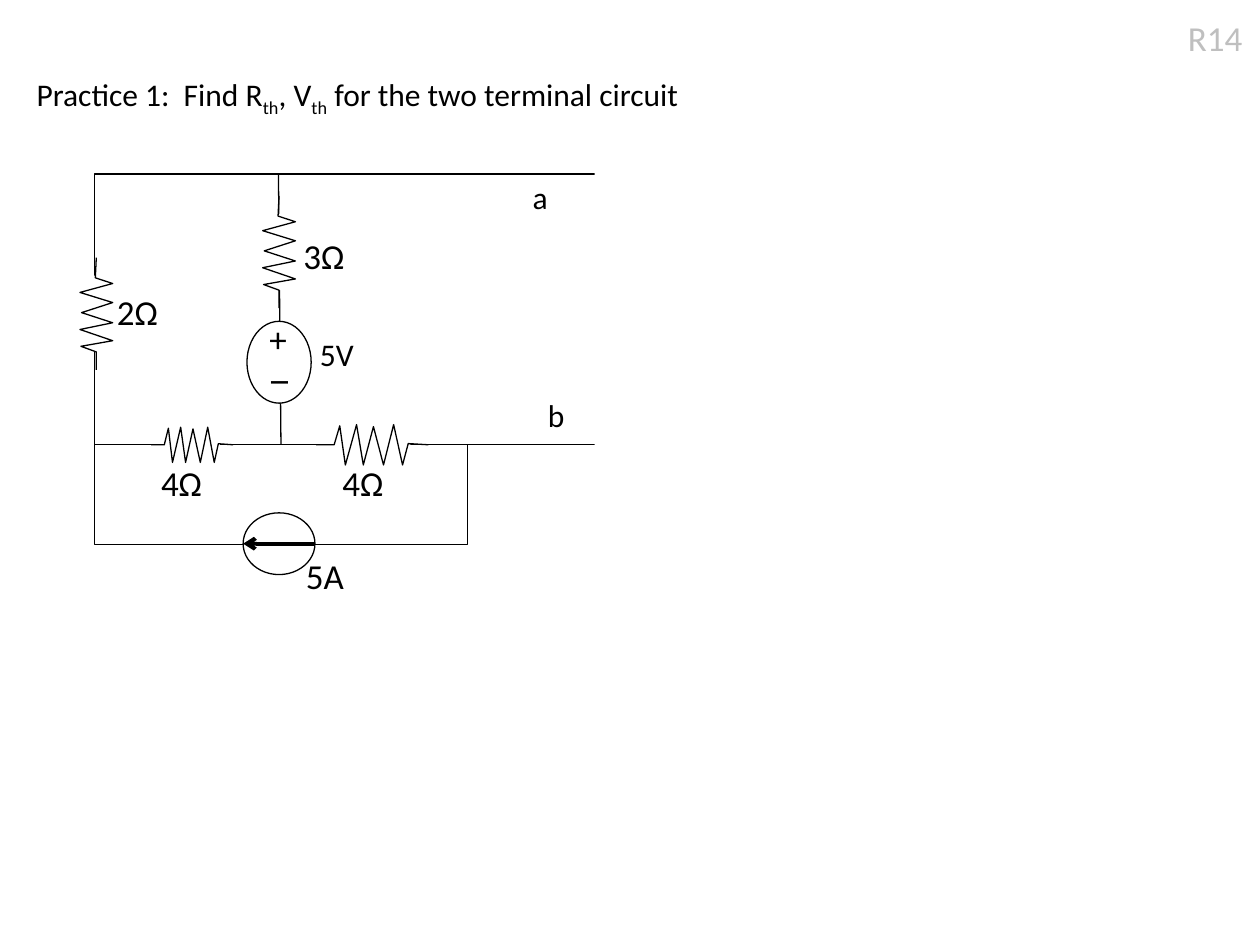
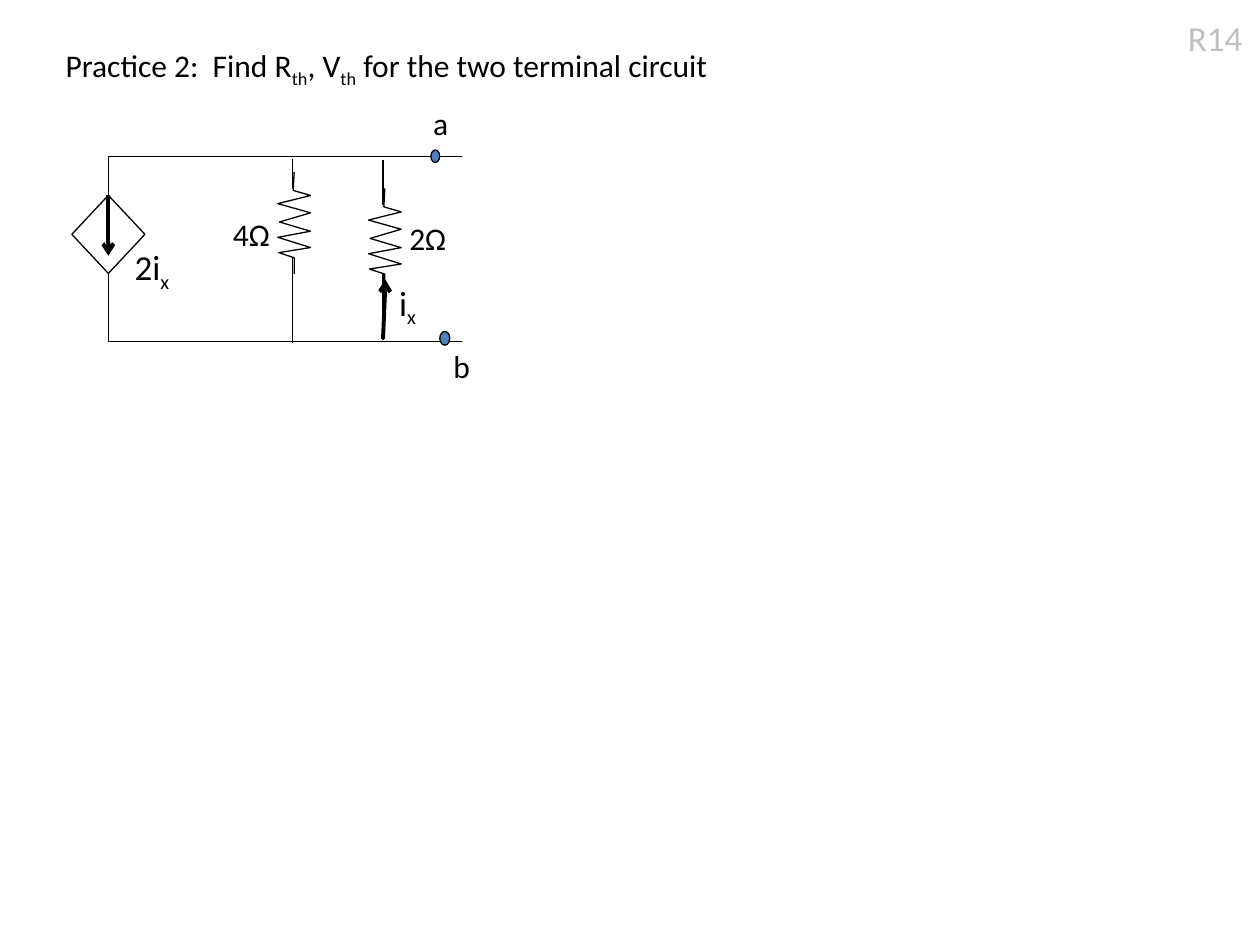
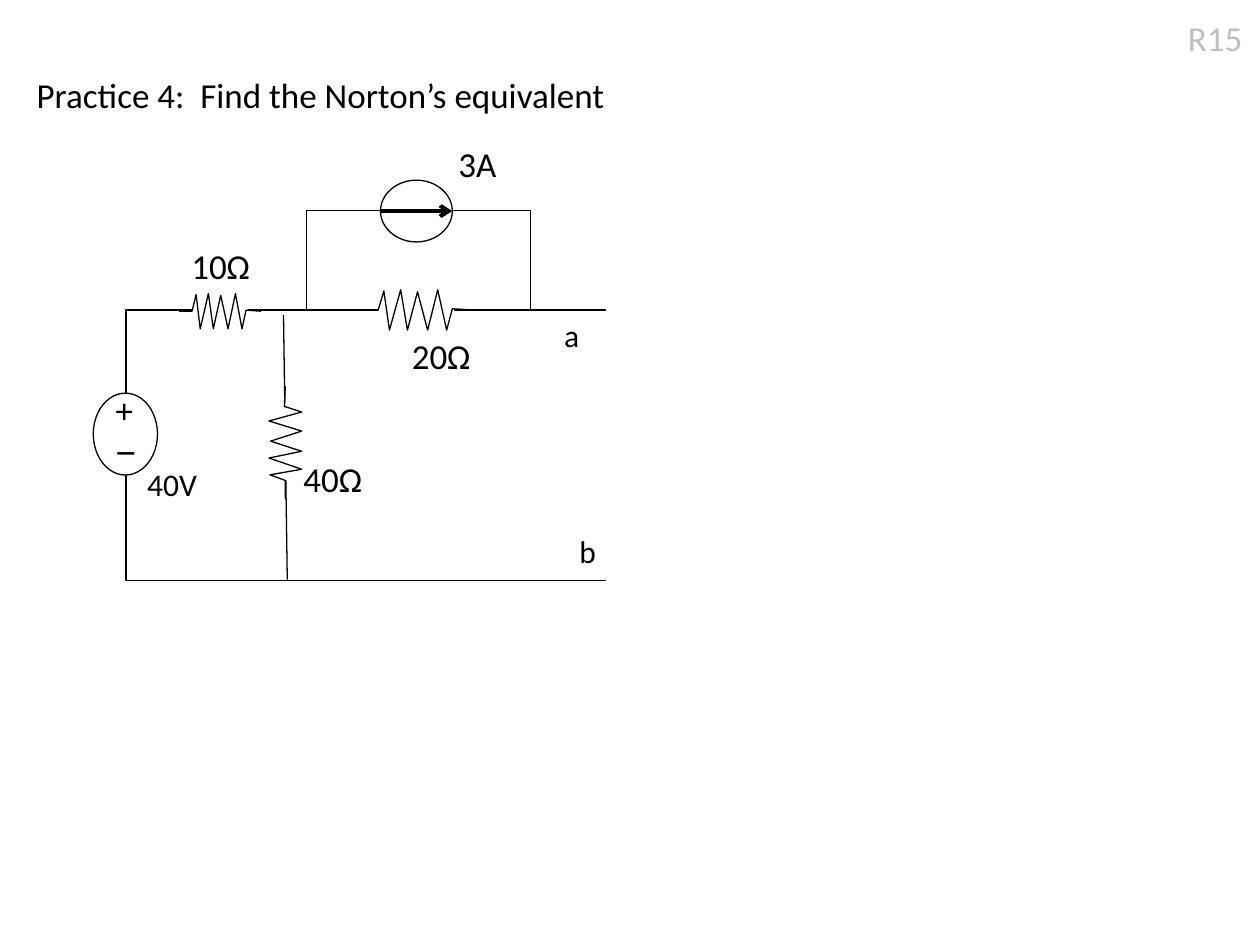
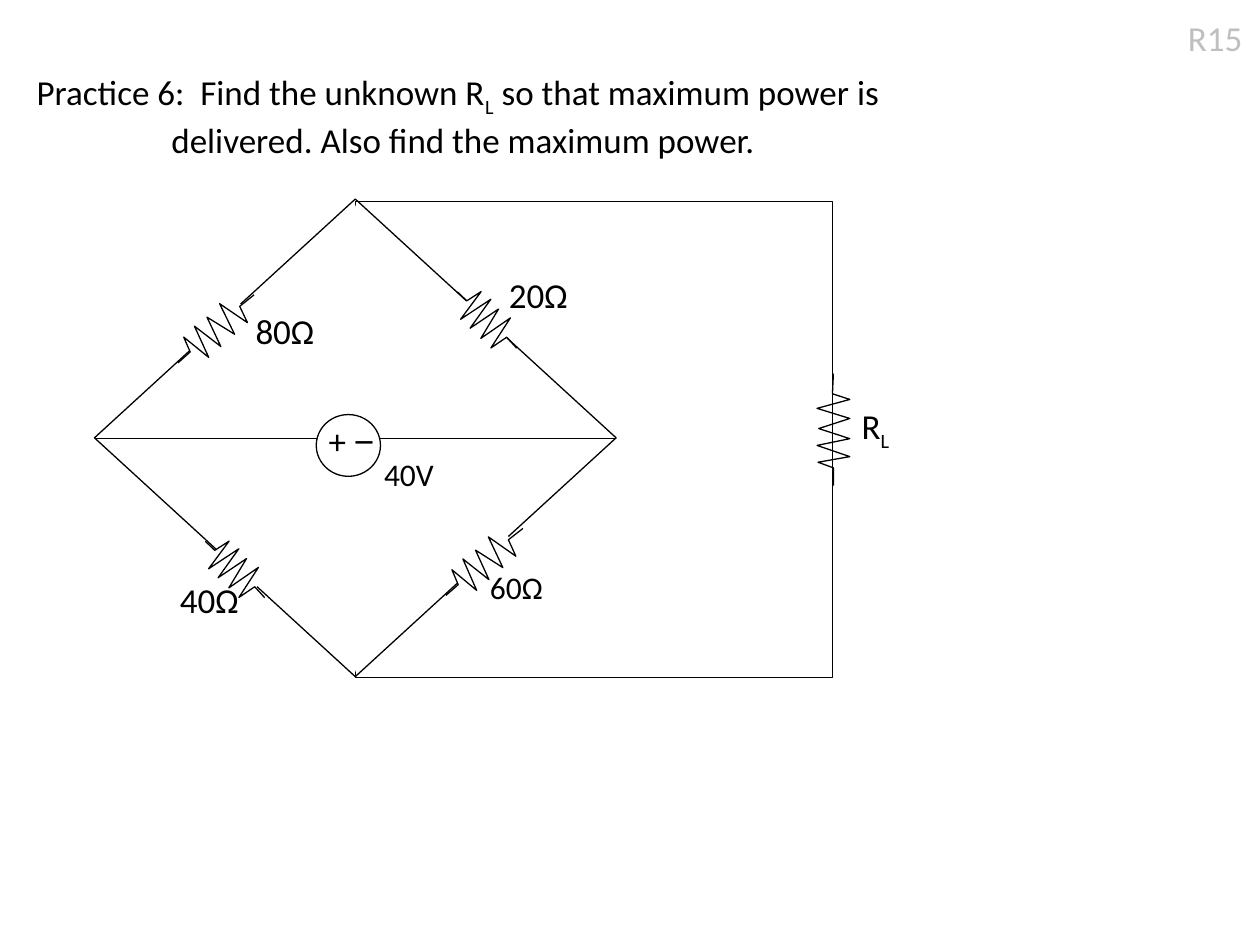
from lxml import etree
from pptx import Presentation, util as u
from pptx.dml.color import RGBColor
from pptx.enum import shapes, text
from pptx.oxml import ns

BLACK, WHITE, GREY, BLUE = "000000", "FFFFFF", "BFBFBF", "4F81BD"
FRAME = shapes.MSO_SHAPE.RECTANGLE
OVAL = shapes.MSO_SHAPE.OVAL
DIAMOND = shapes.MSO_SHAPE.DIAMOND
BREAK = "\n"
SUBSCRIPT = "subscript"
MINUS = ("−", "Arial")
TH = ("th", SUBSCRIPT)
TWO_TERMINAL = ["Find R", TH, ", V", TH, " for the two terminal circuit"]

# Resistor outline as fractions of its box, lead to lead
ZIGZAG = [(0, .5), (.16, .5), (.21, .03), (.26, 1), (.36, 0), (.42, 1),
          (.51, .05), (.6, 1), (.69, 0), (.77, 1), (.82, .47), (1, .5)]


def inch(value):
    return u.Cm(value * 2.54)


def rgb(colour):
    return RGBColor.from_string(colour)


class Circuit:
    """Holds the drawing style and the slide being drawn; places are in inches."""

    font = "Calibri"
    thin, thick = 0.75, 2.25

    def __init__(self):
        self.deck = Presentation()
        self.deck.slide_width, self.deck.slide_height = inch(10), inch(7.5)
        self.slide = None

    def start(self, page, title, x, y, w, h, size, hang=0):
        self.slide = self.deck.slides.add_slide(self.deck.slide_layouts[5])
        heading = self.slide.shapes.title
        for side, value in dict(left=x, top=y, width=w, height=h).items():
            setattr(heading, side, inch(value))
        self.fill_text(heading.text_frame, [title], size)
        if hang:
            indent = heading.text_frame.paragraphs[0]._p.get_or_add_pPr()
            indent.set("marL", str(inch(hang)))
            indent.set("indent", str(-inch(hang)))
        self.label(9.33, 0.08, page, w=0.67, colour=GREY)

    def fill_text(self, frame, lines, size, colour=BLACK):
        """Fill a frame; a line is a list of strings, breaks and (string, style)."""
        settings = dict(word_wrap=True, auto_size=text.MSO_AUTO_SIZE.NONE,
                        vertical_anchor=text.MSO_ANCHOR.MIDDLE,
                        margin_left=inch(.1), margin_right=inch(.1),
                        margin_top=inch(.05), margin_bottom=inch(.05))
        for key, value in settings.items():
            setattr(frame, key, value)
        for number, line in enumerate(lines):
            paragraph = frame.add_paragraph() if number else frame.paragraphs[0]
            paragraph.alignment = text.PP_ALIGN.LEFT
            for piece in line:
                if piece == BREAK:
                    paragraph.add_line_break()
                    continue
                words, style = (piece, None) if isinstance(piece, str) else piece
                run = paragraph.add_run()
                run.text = words
                run.font.size = u.Pt(size)
                run.font.color.rgb = rgb(colour)
                run.font.name = self.font
                if style == SUBSCRIPT:
                    run._r.get_or_add_rPr().set("baseline", "-25000")
                elif style:
                    run.font.name = style

    def label(self, x, y, *lines, w=0.8, h=0.44, size=20, colour=BLACK):
        holder = self.slide.shapes.add_textbox(*map(inch, (x, y, w, h)))
        lines = [[line] if isinstance(line, str) else line for line in lines]
        self.fill_text(holder.text_frame, lines, size, colour)

    def small_label(self, x, y, words):
        self.label(x, y, words, h=0.4, size=18)

    def terminal(self, x, y, letter):
        self.label(x + .06, y, letter, w=0.4, h=0.47, size=18)

    def finish(self, shape, fill, line, turn=0):
        shape.shadow.inherit = False
        shape.rotation = turn
        if fill:
            shape.fill.solid()
            shape.fill.fore_color.rgb = rgb(fill)
        else:
            shape.fill.background()
        if line:
            shape.line.color.rgb = rgb(line)
            shape.line.width = u.Pt(self.thin)
        else:
            shape.line.fill.background()

    def shape(self, kind, x, y, w, h, fill=None, line=BLACK, turn=0):
        drawn = self.slide.shapes.add_shape(kind, *map(inch, (x, y, w, h)))
        self.finish(drawn, fill, line, turn)

    def mask(self, x, y, w, h, kind=FRAME, turn=0):
        """Hide the wires below with a white patch."""
        self.shape(kind, x, y, w, h, WHITE, None, turn)

    def wire(self, x1, y1, x2, y2, arrow=False):
        drawn = self.slide.shapes.add_connector(
            shapes.MSO_CONNECTOR.STRAIGHT, *map(inch, (x1, y1, x2, y2)))
        drawn.line.color.rgb = rgb(BLACK)
        drawn.line.width = u.Pt(self.thick if arrow else self.thin)
        properties = drawn._element.spPr
        if arrow:
            outline = properties.find(ns.qn("a:ln"))
            etree.SubElement(outline, ns.qn("a:tailEnd"), type="arrow")
        etree.SubElement(properties, ns.qn("a:effectLst"))

    def resistor(self, x, y, w, h, turn=0, masked=True):
        if masked:
            self.mask(x + .16 * w, y + .01, .68 * w, h - .02, turn=turn)
        points = [(inch(x + w * across), inch(y + h * down))
                  for across, down in ZIGZAG]
        builder = self.slide.shapes.build_freeform(*points[0])
        builder.add_line_segments(points[1:], close=False)
        self.finish(builder.convert_to_shape(), None, BLACK, turn)

    def voltage_source(self, x, y):
        self.shape(OVAL, x, y, .51, .65, WHITE)
        self.label(x + .08, y - .09, "+", [MINUS], w=.35, h=.78)

    def current_source(self, x, y, leftward=False):
        w, h = .57, .49
        self.shape(OVAL, x, y, w, h, WHITE)
        ends = (x + w, x) if leftward else (x, x + w)
        self.wire(ends[0], y + h / 2, ends[1], y + h / 2, arrow=True)


def practice_1(c):
    c.start("R14", ["Practice 1:  ", *TWO_TERMINAL], .19, .53, 6.61, .47, 18)
    c.wire(2.21, 1.38, 2.23, 3.53)
    c.shape(FRAME, .75, 1.38, 4.12, 2.15)
    c.shape(FRAME, .75, 3.53, 2.96, .79)
    c.voltage_source(1.96, 2.55)
    c.current_source(1.93, 4.07, leftward=True)
    c.resistor(1.2, 3.39, .65, .28)
    c.resistor(2.51, 3.37, .89, .32)
    c.resistor(1.77, 1.87, .89, .26, 270)
    c.mask(4.72, 1.28, .53, 3.17)
    c.resistor(.32, 2.36, .89, .26, 270)
    c.small_label(2.44, 2.61, "5V")
    for x, y, value in [(2.33, 4.35, "5A"), (2.31, 1.81, "3Ω"), (1.18, 3.61, "4Ω"),
                        (.83, 2.25, "2Ω"), (2.62, 3.61, "4Ω")]:
        c.label(x, y, value)
    c.terminal(4.07, 1.33, "a")
    c.terminal(4.19, 3.06, "b")


def practice_2(c):
    c.start("R14", ["Practice 2:  ", *TWO_TERMINAL], .42, .3, 6.61, .47, 18)
    c.shape(FRAME, .86, 1.24, 2.92, 1.47)
    c.wire(2.32, 1.26, 2.32, 2.72)
    c.shape(OVAL, 3.42, 1.19, .07, .1, BLUE)
    c.shape(OVAL, 3.49, 2.63, .08, .11, BLUE)
    c.resistor(1.93, 1.64, .81, .26, 270)
    c.wire(3.04, 1.27, 3.04, 2.7)
    c.shape(DIAMOND, .57, 1.55, .58, .62, WHITE)
    c.wire(.86, 1.55, .86, 2.03, arrow=True)
    c.mask(3.67, 1.03, .26, 1.78)
    c.resistor(2.65, 1.77, .81, .26, 270)
    c.wire(3.04, 2.69, 3.06, 2.22, arrow=True)
    c.small_label(1.75, 1.66, "4Ω")
    c.small_label(3.15, 1.69, "2Ω")
    c.label(.97, 1.92, ["2i", ("x", SUBSCRIPT)])
    c.label(3.07, 2.2, ["i", ("x", SUBSCRIPT)])
    c.terminal(3.28, .74, "a")
    c.terminal(3.44, 2.67, "b")


def practice_4(c):
    c.start("R15", ["Practice 4:  Find the Norton’s equivalent"],
            .19, .53, 4.76, .44, 20)
    c.wire(2.25, 2.5, 2.28, 4.6)
    c.shape(FRAME, 1, 2.46, 4.12, 2.15)
    c.shape(FRAME, 2.43, 1.67, 1.78, .79)
    c.voltage_source(.74, 3.12)
    c.current_source(3.02, 1.43)
    c.resistor(1.42, 2.33, .65, .28)
    c.resistor(2.86, 2.3, .89, .32)
    c.resistor(1.82, 3.38, .89, .26, 270)
    c.small_label(1.07, 3.64, "40V")
    for x, y, value in [(3.54, 1.08, "3A"), (3.17, 2.6, "20Ω"),
                        (2.31, 3.58, "40Ω"), (1.42, 1.89, "10Ω")]:
        c.label(x, y, value)
    c.terminal(4.32, 2.42, "a")
    c.terminal(4.44, 4.14, "b")
    c.mask(4.81, 2.26, .53, 3.17)


def practice_6(c):
    c.start("R15", ["Practice 6:  Find the unknown R", ("L", SUBSCRIPT),
                    " so that maximum power is", BREAK,
                    "delivered. Also find the maximum power."],
            .19, .53, 7.02, .77, 20, hang=1.07)
    c.shape(FRAME, 2.82, 1.6, 3.79, 3.78)
    c.resistor(6.17, 3.28, .89, .26, 270, masked=False)
    c.wire(.75, 3.48, 4.89, 3.48)
    c.shape(DIAMOND, .75, 1.58, 4.14, 3.79)
    c.resistor(1.54, 4.38, .65, .28, 43.5)
    c.resistor(3.54, 2.4, .65, .28, 43.5)
    c.resistor(1.31, 2.48, .81, .26, 318.2)
    c.resistor(3.44, 4.33, .81, .26, 319)
    c.mask(2.76, 1.62, .14, 3.72, OVAL)
    c.shape(OVAL, 2.51, 3.29, .51, .49, WHITE)
    c.label(2.51, 3.28, ["+ ", MINUS], w=.6)
    c.small_label(3.79, 4.46, "60Ω")
    c.small_label(2.95, 3.56, "40V")
    for x, y, value in [(1.93, 2.4, "80Ω"), (6.74, 3.18, ["R", ("L", SUBSCRIPT)]),
                        (3.94, 2.12, "20Ω"), (1.33, 4.54, "40Ω")]:
        c.label(x, y, value)


def main():
    circuit = Circuit()
    for draw in (practice_1, practice_2, practice_4, practice_6):
        draw(circuit)
    circuit.deck.save("out.pptx")


if __name__ == "__main__":
    main()
